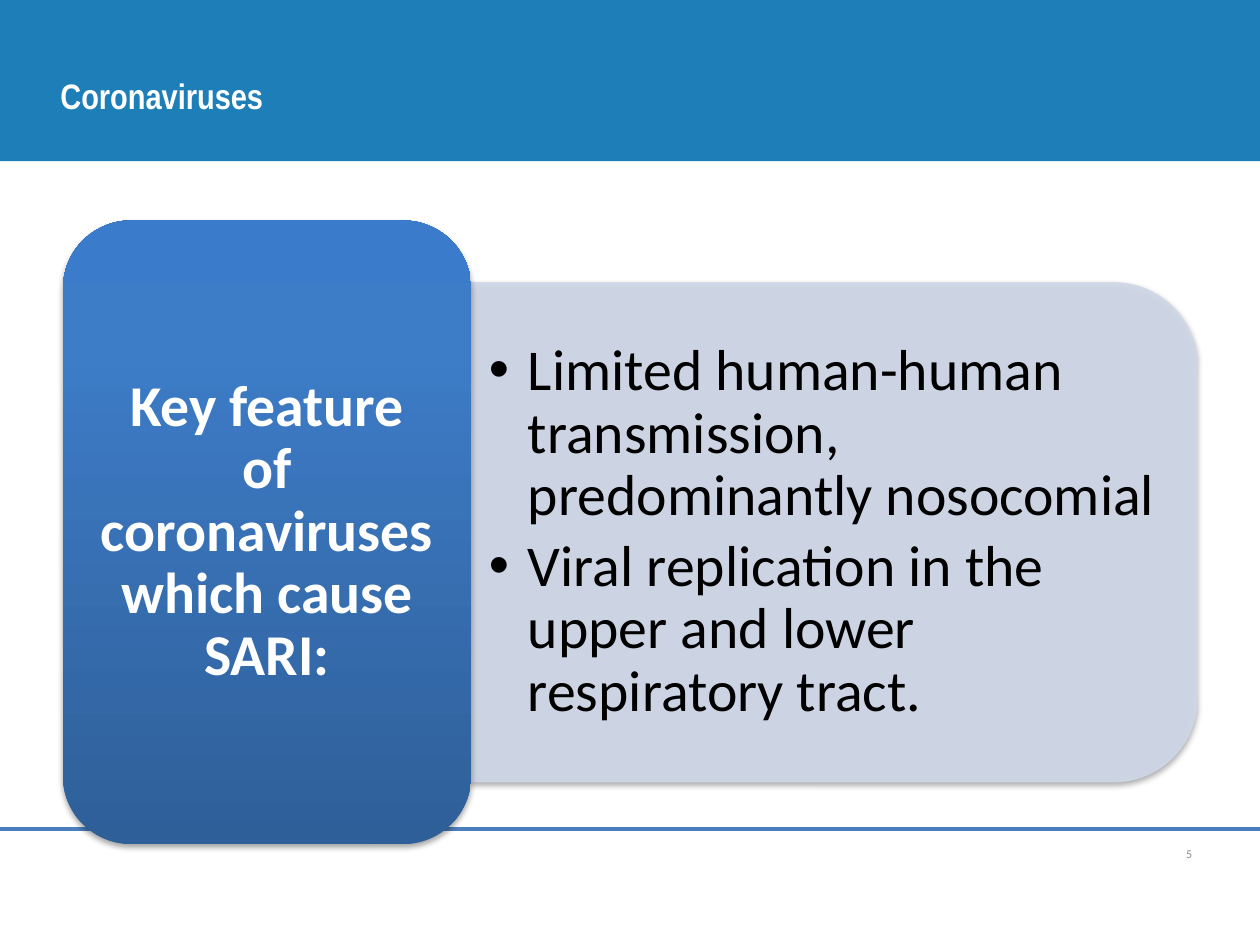
from lxml.etree import SubElement
from pptx import Presentation
from pptx.dml.color import RGBColor
from pptx.enum.shapes import MSO_CONNECTOR, MSO_SHAPE
from pptx.enum.text import MSO_ANCHOR, MSO_AUTO_SIZE, PP_ALIGN
from pptx.oxml.ns import qn
from pptx.util import Inches, Pt

# Content
TITLE = "Coronaviruses"
CARD_TEXT = "Key feature of coronaviruses which cause SARI:"
BULLETS = [
    "Limited human-human transmission, predominantly nosocomial",
    "Viral replication in the upper and lower respiratory tract.",
]
PAGE_NUMBER = "5"

BLUE, RULE, PANEL = "1E7FB8", "4B7EBC", "D0D8E8"
CARD_STOPS = [(0, "2F5F99"), (80, "3D7CC7"), (100, "3A7CCB")]

# Card on the left, panel from its right edge to the slide margin
CARD = (0.5, 1.75, 3.24, 4.95)
PANEL_LEFT, PANEL_WIDTH, PANEL_HEIGHT = CARD[0] + CARD[2], 5.76, 3.96
MIDDLE = CARD[1] + CARD[3] / 2


def color(value):
    return RGBColor.from_string(value)


def inches(lengths):
    return [Inches(length) for length in lengths]


def place(shape, area):
    shape.left, shape.top, shape.width, shape.height = inches(area)


def format_text(para, size, font, value, bold=False):
    for span in para.runs:
        span.font.size = Pt(size)
        span.font.name = font
        span.font.bold = bold
        span.font.color.rgb = color(value)


def set_frame(frame, insets=(0.1, 0.05)):
    frame.word_wrap = True
    frame.auto_size = MSO_AUTO_SIZE.NONE
    frame.vertical_anchor = MSO_ANCHOR.MIDDLE
    frame.margin_left = frame.margin_right = Inches(insets[0])
    frame.margin_top = frame.margin_bottom = Inches(insets[1])


def add_block(kind, area):
    block = page.shapes.add_shape(kind, *inches(area))
    block.shadow.inherit = False
    block.line.fill.background()
    return block


def set_alpha(color_element, percent):
    SubElement(color_element, qn("a:alpha"), val=str(percent * 1000))


def add_shadow(shape):
    effects = shape.element.spPr.find(qn("a:effectLst"))
    shadow = SubElement(effects, qn("a:outerShdw"), blurRad=str(Pt(3.1)),
                        dist=str(Pt(1.8)), dir="5400000", rotWithShape="0")
    set_alpha(SubElement(shadow, qn("a:srgbClr"), val="000000"), 35)


deck = Presentation()
deck.slide_width, deck.slide_height = Inches(10), Inches(7.5)
page = deck.slides.add_slide(deck.slide_layouts[1])
title, body = page.placeholders[0], page.placeholders[1]

# Header band
band = add_block(MSO_SHAPE.RECTANGLE, (0, -0.03, 10, 1.31))
band.fill.solid()
band.fill.fore_color.rgb = color(BLUE)

# Footer rule and page number
rule = page.shapes.add_connector(
    MSO_CONNECTOR.STRAIGHT, *inches((0, 6.58, 10, 6.58)))
rule.line.color.rgb = color(RULE)
rule.line.width = Pt(2)
SubElement(rule.element.spPr, qn("a:effectLst"))

number_box = page.shapes.add_textbox(*inches((7.23, 6.58, 2.33, 0.4)))
set_frame(number_box.text_frame)
number_box.text_frame.text = PAGE_NUMBER
para = number_box.text_frame.paragraphs[0]
para.alignment = PP_ALIGN.RIGHT
para.space_after = Pt(6)
format_text(para, 6.8, "Calibri", "8C8C8C")

# Panel, turned so that its rounded side faces right
panel = add_block(MSO_SHAPE.ROUND_2_SAME_RECTANGLE, (
    PANEL_LEFT + (PANEL_WIDTH - PANEL_HEIGHT) / 2, MIDDLE - PANEL_WIDTH / 2,
    PANEL_HEIGHT, PANEL_WIDTH))
panel.rotation = 90
panel.fill.solid()
panel.fill.fore_color.rgb = color(PANEL)
panel.line.color.rgb = color(PANEL)
panel.line.width = Pt(0.75)
for panel_color in list(panel.element.spPr.iter(qn("a:srgbClr"))):
    set_alpha(panel_color, 90)
add_shadow(panel)

# Card with gradient
card = add_block(MSO_SHAPE.ROUNDED_RECTANGLE, CARD)
card.fill.gradient()
card.fill.gradient_angle = 90
stops = card.element.spPr.find(".//" + qn("a:gsLst"))
stops.clear()
for position, value in CARD_STOPS:
    stop = SubElement(stops, qn("a:gs"), pos=str(position * 1000))
    SubElement(stop, qn("a:srgbClr"), val=value)
add_shadow(card)
set_frame(card.text_frame, (0.14, 0.07))
card.text_frame.text = CARD_TEXT
para = card.text_frame.paragraphs[0]
para.alignment = PP_ALIGN.CENTER
para.line_spacing = 0.9
format_text(para, 33, "Calibri", "FFFFFF", True)

# Title and list, in front of the band and the panel
for holder in (title, body):
    holder.element.getparent().append(holder.element)

place(title, (0.38, 0.13, 9, 1.25))
set_frame(title.text_frame)
title.text_frame.text = TITLE
para = title.text_frame.paragraphs[0]
para.alignment = PP_ALIGN.LEFT
format_text(para, 20.2, "Arial Narrow", "FFFFFF", True)

place(body, (PANEL_LEFT, MIDDLE - 3.57 / 2, 5.57, 3.57))
set_frame(body.text_frame, (0.14, 0.07))
body.text_frame.text = "\n".join(BULLETS)
for para in body.text_frame.paragraphs:
    properties = para._p.get_or_add_pPr()
    properties.set("marL", str(Inches(0.31)))
    properties.set("indent", str(Inches(-0.31)))
    SubElement(properties, qn("a:buChar"), char="•")
    para.line_spacing = 0.9
    para.space_before = Pt(0)
    para.space_after = Pt(5)
    format_text(para, 33, "Calibri", "000000")

deck.save("out.pptx")
